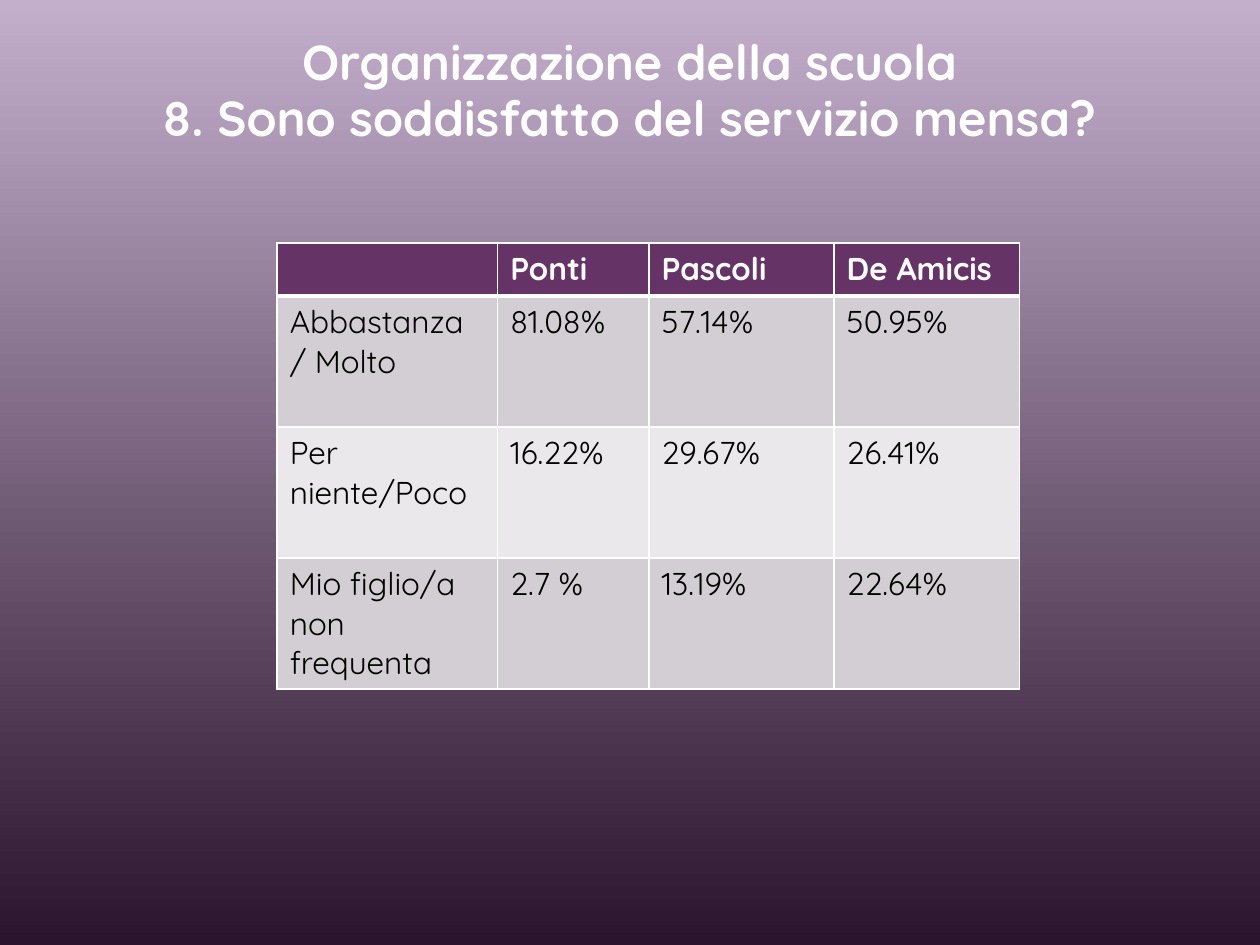
from dataclasses import dataclass

from lxml.etree import SubElement
from pptx import Presentation
from pptx.dml.color import RGBColor as RGB
from pptx.enum.text import MSO_ANCHOR as ANCHOR, MSO_AUTO_SIZE as AUTO, PP_ALIGN as ALIGN
from pptx.oxml.ns import qn
from pptx.util import Inches, Pt


@dataclass(frozen=True)
class Theme:
    font: str = "Quicksand"
    light: str = "FFFFFF"
    dark: str = "000000"
    header: str = "663366"
    bands: tuple = ("D3CED3", "EAE8EA")
    gradient: tuple = ("C3AFCC", "2B142D")
    title_size: int = 28
    cell_size: int = 18
    thin: int = 1
    thick: int = 3


THEME = Theme()
TITLE = "Organizzazione della scuola\v8. Sono soddisfatto del servizio mensa?"
COL_WIDTHS = (1.75, 1.2, 1.47, 1.47)
ROW_HEIGHTS = (0.42, 1.04, 1.04, 1.04)
ROWS = (
    ("", "Ponti", "Pascoli", "De Amicis"),
    ("Abbastanza / Molto", "81.08%", "57.14%", "50.95%"),
    ("Per niente/Poco", "16.22%", "29.67%", "26.41%"),
    ("Mio figlio/a non frequenta", "2.7 %", "13.19%", "22.64%"),
)


def write(tf, text, size=THEME.cell_size, color=THEME.dark, bold=False,
          align=ALIGN.LEFT, spacing=None):
    p = tf.paragraphs[0]
    p.text = text
    p.alignment = align
    p.line_spacing = spacing
    for r in p.runs:
        r.font.name = THEME.font
        r.font.size = Pt(size)
        r.font.bold = bold
        r.font.color.rgb = RGB.from_string(color)


def paint_background(s):
    fill = s.background.fill
    fill.gradient()
    fill.gradient_angle = 270
    for stop, color in zip(fill.gradient_stops, THEME.gradient):
        stop.color.rgb = RGB.from_string(color)


def add_title(s):
    sp = s.shapes.title
    sp.left, sp.top, sp.width, sp.height = map(Inches, (0.85, 0.1, 8.29, 1.25))
    tf = sp.text_frame
    tf.word_wrap = True
    tf.auto_size = AUTO.NONE
    tf.vertical_anchor = ANCHOR.MIDDLE
    write(tf, TITLE, size=THEME.title_size, color=THEME.light, bold=True,
          align=ALIGN.CENTER, spacing=0.95)


def set_borders(cell, **widths):
    """Draw the given sides (L, R, T, B) in points; call before filling the cell."""
    tc_pr = cell._tc.get_or_add_tcPr()
    for side, width in widths.items():
        ln = SubElement(tc_pr, qn(f"a:ln{side}"), w=str(Pt(width)))
        SubElement(SubElement(ln, qn("a:solidFill")), qn("a:srgbClr"), val=THEME.light)


def format_cell(cell, text, row):
    is_header = row == 0
    set_borders(cell, L=THEME.thin, R=THEME.thin,
                T=THEME.thick if row == 1 else THEME.thin,
                B=THEME.thick if is_header else THEME.thin)
    cell.fill.solid()
    color = THEME.header if is_header else THEME.bands[(row - 1) % 2]
    cell.fill.fore_color.rgb = RGB.from_string(color)
    write(cell.text_frame, text, bold=is_header,
          color=THEME.light if is_header else THEME.dark)


def add_results_table(s):
    table = s.shapes.add_table(
        len(ROWS), len(COL_WIDTHS), Inches(2.2), Inches(1.93),
        Inches(sum(COL_WIDTHS)), Inches(sum(ROW_HEIGHTS))).table
    for column, width in zip(table.columns, COL_WIDTHS):
        column.width = Inches(width)
    for i, (height, texts) in enumerate(zip(ROW_HEIGHTS, ROWS)):
        table.rows[i].height = Inches(height)
        for j, text in enumerate(texts):
            format_cell(table.cell(i, j), text, i)


def main():
    prs = Presentation()
    prs.slide_width, prs.slide_height = Inches(10), Inches(7.5)
    s = prs.slides.add_slide(prs.slide_layouts[5])
    paint_background(s)
    add_title(s)
    add_results_table(s)
    prs.save("out.pptx")


if __name__ == "__main__":
    main()
